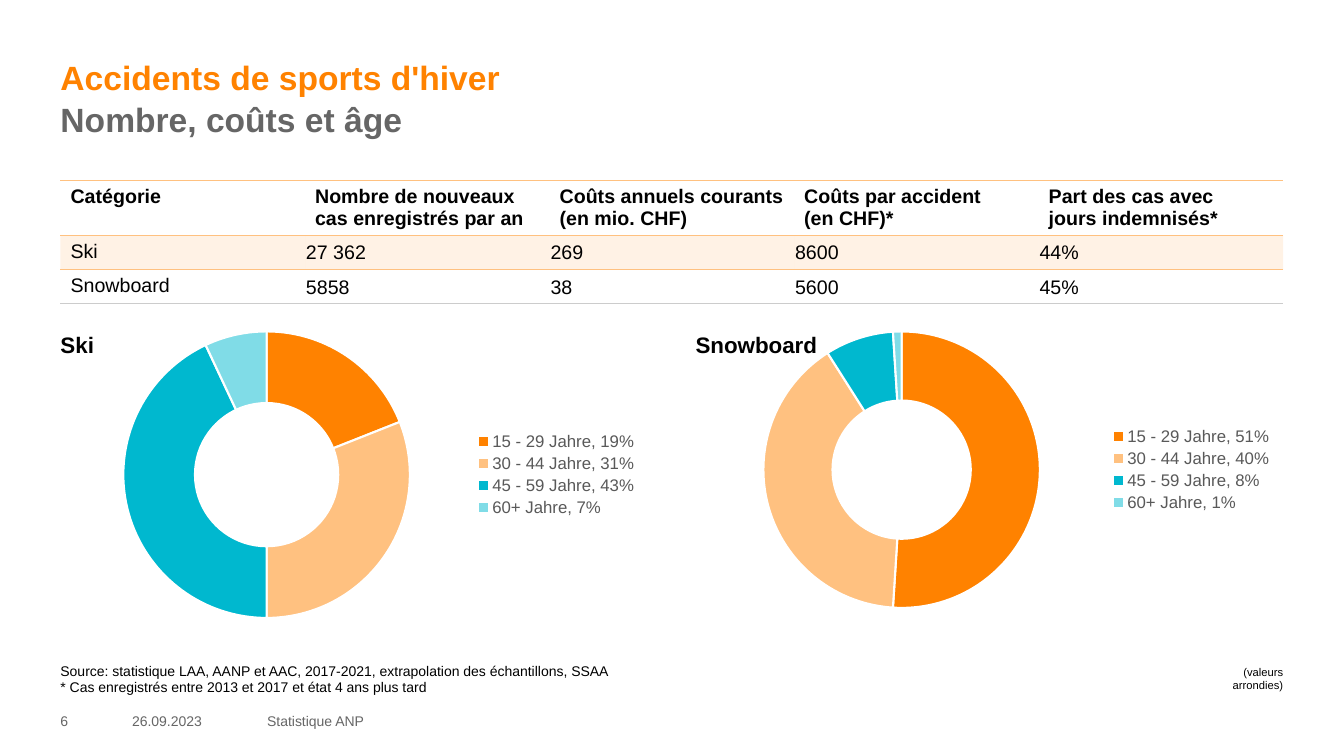
"""Build the slide on winter sports accidents: cost table and two age doughnuts."""
from lxml import etree
from pptx import Presentation
from pptx import util as u
from pptx.chart.data import CategoryChartData
from pptx.dml.color import RGBColor
from pptx.enum import chart as charts, text
from pptx.oxml import parse_xml
from pptx.oxml.ns import nsdecls, qn

LEFT, WIDTH = 43.2, 873.4
ORANGE, PEACH, TEAL, AQUA = "FF8200", "FFC180", "00B8CF", "80DCE7"
BLACK, GREY, WHITE = "000000", "666666", "FFFFFF"


def color(value):
    return RGBColor.from_string(value)


def write(paragraph, content, size=10, fill=BLACK, bold=False, align=text.PP_ALIGN.LEFT):
    paragraph.alignment = align
    for index, line in enumerate(content.split("\n")):
        if index:
            paragraph.add_line_break()
        run = paragraph.add_run()
        run.text = line
        run.font.name, run.font.size, run.font.bold = "Arial", u.Pt(size), bold
        run.font.color.rgb = color(fill)


presentation = Presentation()
presentation.slide_width, presentation.slide_height = u.Pt(960), u.Pt(540)
slide = presentation.slides.add_slide(presentation.slide_layouts[5])

title = slide.shapes.title
title.left, title.top, title.width, title.height = u.Pt(LEFT), u.Pt(39.4), u.Pt(WIDTH), u.Pt(67.7)
frame = title.text_frame
frame.margin_left = frame.margin_right = frame.margin_top = frame.margin_bottom = 0
frame.vertical_anchor = text.MSO_ANCHOR.TOP
frame.auto_size = text.MSO_AUTO_SIZE.NONE
heading = frame.paragraphs[0]
heading.line_spacing = 1.04
write(heading, "Accidents de sports d'hiver", size=24, fill=ORANGE, bold=True)
heading.add_line_break()
write(heading, "Nombre, coûts et âge", size=24, fill=GREY, bold=True)

age_groups = ["15 - 29 Jahre", "30 - 44 Jahre", "45 - 59 Jahre", "60+ Jahre"]
doughnuts = [
    ("Ski", LEFT, 224.6, [19, 31, 43, 7]),
    ("Snowboard", 496.8, 217.4, [51, 40, 8, 1]),
]
for sport, left, height, shares in doughnuts:
    data = CategoryChartData()
    data.categories = [f"{group}, {share}%" for group, share in zip(age_groups, shares)]
    data.add_series(sport, shares)
    chart = slide.shapes.add_chart(
        charts.XL_CHART_TYPE.DOUGHNUT, u.Pt(left), u.Pt(226.8), u.Pt(419.8), u.Pt(height), data
    ).chart
    chart.has_title = False
    chart.font.name, chart.font.size = "Arial", u.Pt(10)
    chart.font.color.rgb = color(BLACK)
    chart.has_legend = True
    chart.legend.position = charts.XL_LEGEND_POSITION.RIGHT
    chart.legend.include_in_layout = False
    chart.legend.font.name, chart.legend.font.size = "Arial", u.Pt(12)
    chart.legend.font.color.rgb = color("595959")
    plot = chart.plots[0]
    plot.vary_by_categories = True
    plot._element.find(qn("c:holeSize")).set("val", "55")
    for index, shade in enumerate([ORANGE, PEACH, TEAL, AQUA]):
        segment = plot.series[0].points[index].format
        segment.fill.solid()
        segment.fill.fore_color.rgb = color(shade)
        segment.line.color.rgb = color(WHITE)
        segment.line.width = u.Pt(1.5)

rows = [
    ["Catégorie", "Nombre de nouveaux cas enregistrés par an", "Coûts annuels courants (en mio. CHF)",
     "Coûts par accident\n(en CHF)*", "Part des cas avec\njours indemnisés*"],
    ["Ski", "27 362", "269", "8600", "44%"],
    ["Snowboard", "5858", "38", "5600", "45%"],
]
row_heights = [39.4, 24.5, 24.5]
table = slide.shapes.add_table(
    3, 5, u.Pt(LEFT), u.Pt(128.7), u.Pt(WIDTH), u.Pt(sum(row_heights))
).table
table.first_row = table.horz_banding = False
table._tbl.tblPr.find(qn("a:tableStyleId")).text = "{2D5ABB26-0587-4C30-8999-92F81FD0307C}"
rules = [PEACH, PEACH, PEACH, "CCCCCC"]
for row, values in enumerate(rows):
    table.rows[row].height = u.Pt(row_heights[row])
    for column, value in enumerate(values):
        cell = table.cell(row, column)
        write(cell.text_frame.paragraphs[0], value, size=14, bold=row == 0)
        if row and column:
            cell.vertical_anchor = text.MSO_ANCHOR.MIDDLE
            cell.margin_left = cell.margin_right = cell.margin_top = u.Pt(0.7)
            cell.margin_bottom = 0
        properties = cell._tc.get_or_add_tcPr()
        for side, rule in (("lnT", rules[row]), ("lnB", rules[row + 1])):
            properties.append(parse_xml(
                f'<a:{side} {nsdecls("a")} w="{u.Pt(1)}"><a:solidFill>'
                f'<a:srgbClr val="{rule}"/></a:solidFill></a:{side}>'
            ))
        if row == 2:
            cell.fill.background()
            continue
        cell.fill.solid()
        cell.fill.fore_color.rgb = color(PEACH if row else WHITE)
        if row:
            tint = properties.find(qn("a:solidFill")).find(qn("a:srgbClr"))
            etree.SubElement(tint, qn("a:alpha"), val="20000")

middle, top = text.MSO_ANCHOR.MIDDLE, text.MSO_ANCHOR.TOP
sources = [
    "Source: statistique LAA, AANP et AAC, 2017-2021, extrapolation des échantillons, SSAA",
    "* Cas enregistrés entre 2013 et 2017 et état 4 ans plus tard",
]
labels = [(sport, LEFT, 236.2, 414, 51.1, top, [sport], dict(size=16, bold=True)) for sport in ()]
labels = [
    (left, 236.2, 414, 51.1, top, [sport], {"size": 16, "bold": True})
    for sport, left, height, shares in doughnuts
] + [
    (LEFT, 473, 800, 31.7, top, sources, {}),
    (868, 475.2, 48.6, 20, top, ["(valeurs arrondies)"], {"size": 8, "align": text.PP_ALIGN.RIGHT}),
    (LEFT, 507.6, 39.6, 14.4, middle, ["6"], {"fill": GREY}),
    (94.3, 507.6, 85, 14.4, middle, ["26.09.2023"], {"fill": GREY}),
    (190.8, 507.6, 617.8, 14.4, middle, ["Statistique ANP"], {"fill": GREY}),
]
for left, box_top, width, height, anchor, lines, style in labels:
    frame = slide.shapes.add_textbox(u.Pt(left), u.Pt(box_top), u.Pt(width), u.Pt(height)).text_frame
    frame.margin_left = frame.margin_right = frame.margin_top = frame.margin_bottom = 0
    frame.word_wrap = True
    frame.vertical_anchor = anchor
    for index, line in enumerate(lines):
        paragraph = frame.add_paragraph() if index else frame.paragraphs[0]
        write(paragraph, line, **style)

presentation.save("out.pptx")
